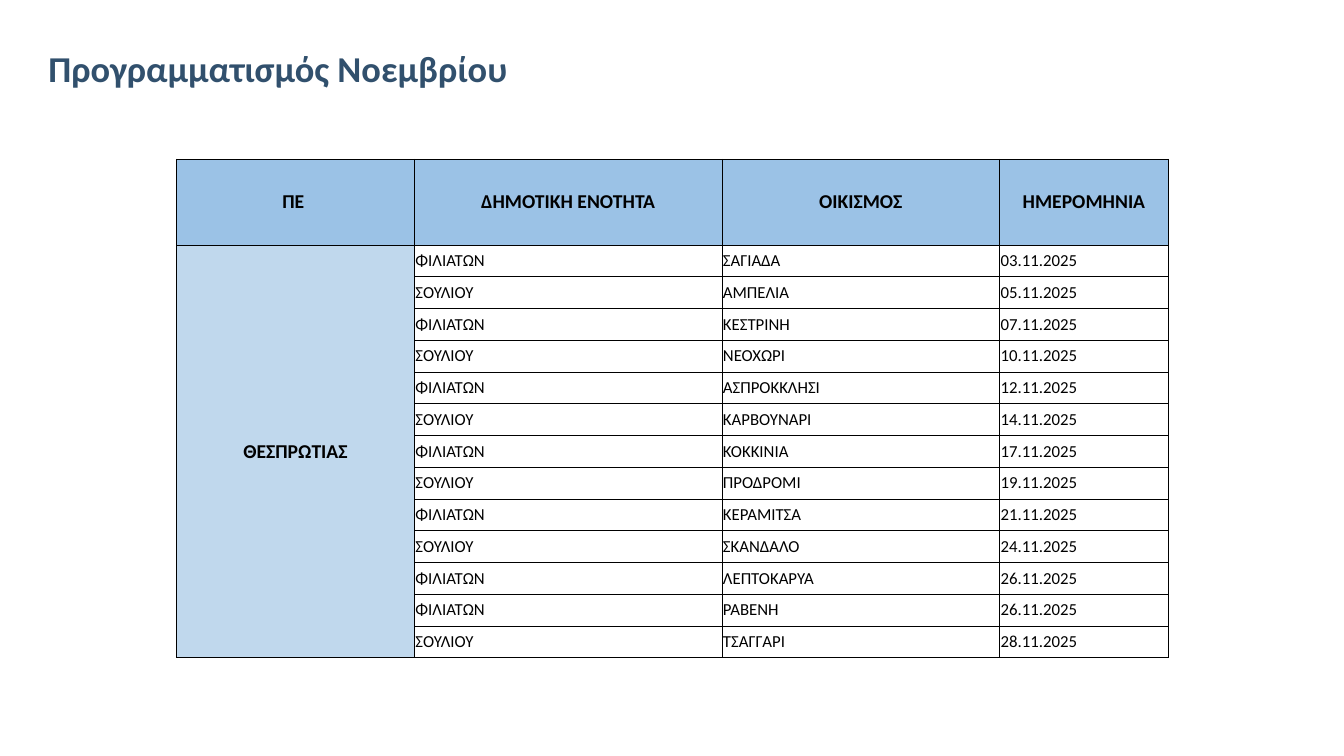
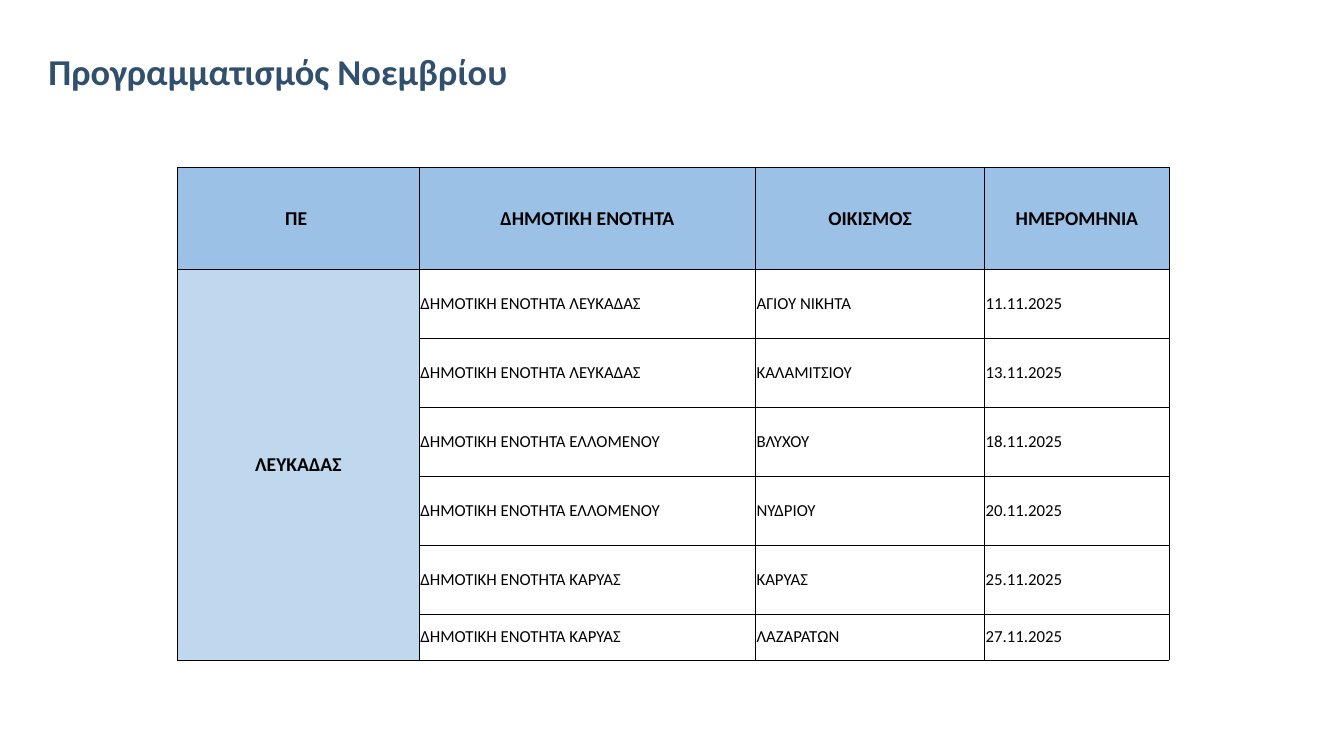
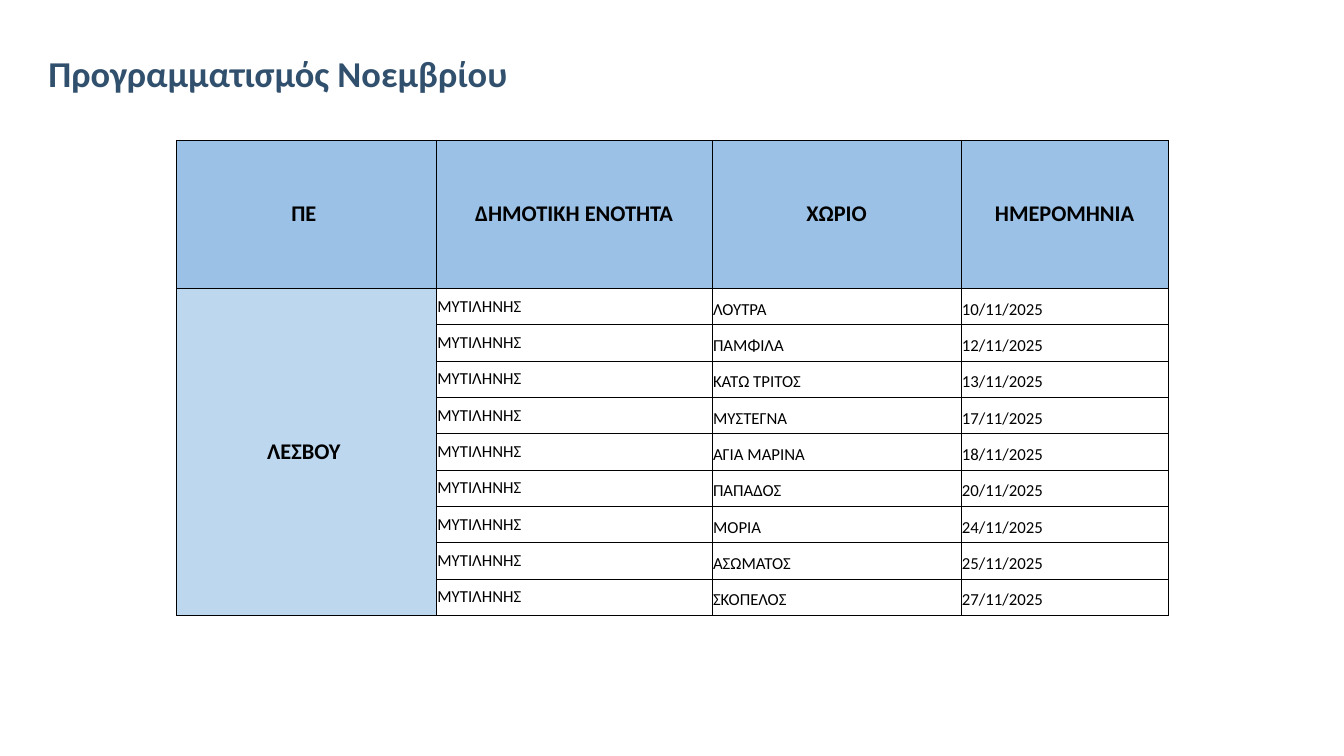
"""Build the three November schedule slides, one table per regional unit."""
from lxml import etree
from pptx import Presentation
from pptx.dml.color import RGBColor
from pptx.enum.text import MSO_ANCHOR, PP_ALIGN
from pptx.oxml.ns import qn
from pptx.util import Inches, Pt

MIDDLE, BOTTOM = MSO_ANCHOR.MIDDLE, MSO_ANCHOR.BOTTOM
LEFT, CENTER = PP_ALIGN.LEFT, PP_ALIGN.CENTER
TITLE = "Προγραμματισμός Νοεμβρίου"

SCHEDULES = [
    {
        "title_height": 9.33,
        "place": (13.13, 21.07),
        "columns": [24, 31, 28, 17],
        "rows": [11.33] + [4.2] * 13,
        "header": ["ΠΕ ", "ΔΗΜΟΤΙΚΗ ΕΝΟΤΗΤΑ", "ΟΙΚΙΣΜΟΣ", "ΗΜΕΡΟΜΗΝΙΑ"],
        "region": "ΘΕΣΠΡΩΤΙΑΣ",
        "visits": [
            ("ΦΙΛΙΑΤΩΝ", "ΣΑΓΙΑΔΑ", "03.11.2025"),
            ("ΣΟΥΛΙΟΥ", "ΑΜΠΕΛΙΑ", "05.11.2025"),
            ("ΦΙΛΙΑΤΩΝ", "ΚΕΣΤΡΙΝΗ", "07.11.2025"),
            ("ΣΟΥΛΙΟΥ", "ΝΕΟΧΩΡΙ", "10.11.2025"),
            ("ΦΙΛΙΑΤΩΝ", "ΑΣΠΡΟΚΚΛΗΣΙ", "12.11.2025"),
            ("ΣΟΥΛΙΟΥ", "ΚΑΡΒΟΥΝΑΡΙ", "14.11.2025"),
            ("ΦΙΛΙΑΤΩΝ", "ΚΟΚΚΙΝΙΑ", "17.11.2025"),
            ("ΣΟΥΛΙΟΥ", "ΠΡΟΔΡΟΜΙ", "19.11.2025"),
            ("ΦΙΛΙΑΤΩΝ", "ΚΕΡΑΜΙΤΣΑ", "21.11.2025"),
            ("ΣΟΥΛΙΟΥ", "ΣΚΑΝΔΑΛΟ", "24.11.2025"),
            ("ΦΙΛΙΑΤΩΝ", "ΛΕΠΤΟΚΑΡΥΑ", "26.11.2025"),
            ("ΦΙΛΙΑΤΩΝ", "ΡΑΒΕΝΗ", "26.11.2025"),
            ("ΣΟΥΛΙΟΥ", "ΤΣΑΓΓΑΡΙ", "28.11.2025"),
        ],
    },
    {
        "title_height": 9.73,
        "place": (13.2, 22.13),
        "columns": [24.4, 33.9, 23.1, 18.6],
        "rows": [13.5] + [9.12] * 5 + [6.1],
        "header": ["ΠΕ ", "ΔΗΜΟΤΙΚΗ ΕΝΟΤΗΤΑ", "ΟΙΚΙΣΜΟΣ", "ΗΜΕΡΟΜΗΝΙΑ"],
        "region": "ΛΕΥΚΑΔΑΣ",
        "visits": [
            ("ΔΗΜΟΤΙΚΗ ΕΝΟΤΗΤΑ ΛΕΥΚΑΔΑΣ", "ΑΓΙΟΥ ΝΙΚΗΤΑ", "11.11.2025"),
            ("ΔΗΜΟΤΙΚΗ ΕΝΟΤΗΤΑ ΛΕΥΚΑΔΑΣ", "ΚΑΛΑΜΙΤΣΙΟΥ", "13.11.2025"),
            ("ΔΗΜΟΤΙΚΗ ΕΝΟΤΗΤΑ ΕΛΛΟΜΕΝΟΥ", "ΒΛΥΧΟΥ", "18.11.2025"),
            ("ΔΗΜΟΤΙΚΗ ΕΝΟΤΗΤΑ ΕΛΛΟΜΕΝΟΥ", "ΝΥΔΡΙΟΥ", "20.11.2025"),
            ("ΔΗΜΟΤΙΚΗ ΕΝΟΤΗΤΑ ΚΑΡΥΑΣ", "ΚΑΡΥΑΣ", "25.11.2025"),
            ("ΔΗΜΟΤΙΚΗ ΕΝΟΤΗΤΑ ΚΑΡΥΑΣ", "ΛΑΖΑΡΑΤΩΝ", "27.11.2025"),
        ],
    },
    {
        "title_height": 10,
        "place": (13.13, 18.53),
        "columns": [26.2, 27.8, 25.1, 20.9],
        "rows": [19.6] + [4.81] * 9,
        "header": ["ΠΕ ", "ΔΗΜΟΤΙΚΗ ΕΝΟΤΗΤΑ", "ΧΩΡΙΟ", "ΗΜΕΡΟΜΗΝΙΑ"],
        "region": "ΛΕΣΒΟΥ ",
        "visits": [
            ("ΜΥΤΙΛΗΝΗΣ", village, f"{day}/11/2025")
            for village, day in [
                ("ΛΟΥΤΡΑ", 10), ("ΠΑΜΦΙΛΑ", 12), ("ΚΑΤΩ ΤΡΙΤΟΣ", 13),
                ("ΜΥΣΤΕΓΝΑ", 17), ("ΑΓΙΑ ΜΑΡΙΝΑ", 18), ("ΠΑΠΑΔΟΣ", 20),
                ("ΜΟΡΙΑ", 24), ("ΑΣΩΜΑΤΟΣ", 25), ("ΣΚΟΠΕΛΟΣ", 27),
            ]
        ],
        "heading_size": 16,
        "region_fill": "region_light",
        "place_anchor": BOTTOM,
    },
]


class ScheduleDeck:
    """Hold the shared style and the current slide; lengths are percent of the slide."""

    colors = {
        "title": "31506D", "text": "000000", "border": "000000", "header": "9BC2E6",
        "region": "C0D8ED", "region_light": "BDD7EE", "body": "FFFFFF",
    }
    font_name = "Calibri"
    table_width = 73.8

    def __init__(self):
        self.deck = Presentation()
        self.deck.slide_width, self.deck.slide_height = Inches(13.33), Inches(7.5)
        self.slide = None

    def across(self, share):
        return round(self.deck.slide_width * share / 100)

    def down(self, share):
        return round(self.deck.slide_height * share / 100)

    def color(self, name):
        return RGBColor.from_string(self.colors[name])

    def add_slide(self):
        self.slide = self.deck.slides.add_slide(self.deck.slide_layouts[6])

    def styled_text(self, frame, text, size, color, bold, align):
        frame.text = text
        para = frame.paragraphs[0]
        para.alignment = align
        font = para.runs[0].font
        font.name, font.size, font.bold = self.font_name, Pt(size), bold
        font.color.rgb = self.color(color)
        return para

    def title(self, text, height):
        box = self.slide.shapes.add_textbox(
            self.across(2.7), self.down(3.33), self.across(93), self.down(height))
        frame = box.text_frame
        frame.word_wrap = True
        frame.vertical_anchor = BOTTOM
        frame.margin_left, frame.margin_right = Inches(0.12), Inches(0.1)
        para = self.styled_text(frame, text, 26, "title", True, LEFT)
        para.line_spacing = 0.9

    def borders(self, cell):
        properties = cell._tc.get_or_add_tcPr()
        for index, side in enumerate(("lnL", "lnR", "lnT", "lnB")):
            line = etree.Element(qn(f"a:{side}"), w=str(Pt(0.5)))
            fill = etree.SubElement(line, qn("a:solidFill"))
            etree.SubElement(fill, qn("a:srgbClr"), val=self.colors["border"])
            properties.insert(index, line)

    def cell(self, cell, text, fill, size=12, bold=False, align=LEFT, anchor=MIDDLE):
        cell.margin_left = cell.margin_right = Inches(0.01)
        cell.margin_top = cell.margin_bottom = Inches(0.05)
        cell.vertical_anchor = anchor
        cell.fill.solid()
        cell.fill.fore_color.rgb = self.color(fill)
        self.styled_text(cell.text_frame, text, size, "text", bold, align)

    def table(self, place, columns, rows, header, region, visits,
              heading_size=14, region_fill="region", place_anchor=MIDDLE):
        left, top = place
        table = self.slide.shapes.add_table(
            len(rows), len(columns), self.across(left), self.down(top),
            self.across(self.table_width), self.down(sum(rows))).table
        table.first_row = table.horz_banding = False
        for column, share in zip(table.columns, columns):
            column.width = self.across(self.table_width * share / 100)
        for row, share in zip(table.rows, rows):
            row.height = self.down(share)

        heading = {"size": heading_size, "bold": True, "align": CENTER}
        for column, text in enumerate(header):
            self.cell(table.cell(0, column), text, "header", **heading)
        region_cell = table.cell(1, 0)
        region_cell.merge(table.cell(len(visits), 0))
        self.cell(region_cell, region, region_fill, **heading)
        for row, visit in enumerate(visits, 1):
            for column, text in enumerate(visit, 1):
                anchor = MIDDLE if column == 1 else place_anchor
                self.cell(table.cell(row, column), text, "body", anchor=anchor)
        for cell in table.iter_cells():
            self.borders(cell)


def main():
    schedule_deck = ScheduleDeck()
    for schedule in SCHEDULES:
        content = dict(schedule)
        schedule_deck.add_slide()
        schedule_deck.title(TITLE, content.pop("title_height"))
        schedule_deck.table(**content)
    schedule_deck.deck.save("out.pptx")


if __name__ == "__main__":
    main()
